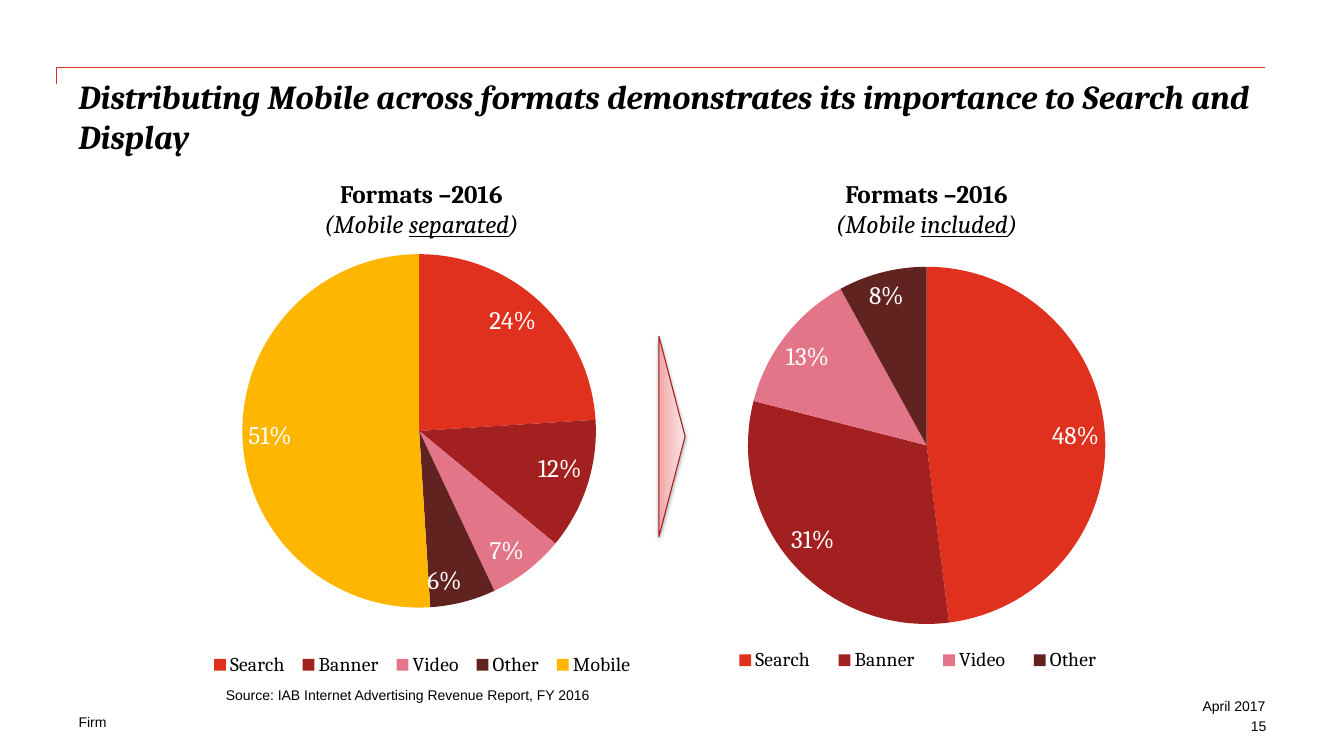
from lxml import etree
from pptx import Presentation
from pptx.chart.data import CategoryChartData
from pptx.dml.color import RGBColor
from pptx.enum import chart as chart_types, shapes, text
from pptx.oxml import parse_xml
from pptx.oxml.ns import nsdecls, qn
from pptx.util import Inches, Pt

# Content
TITLE = "Distributing Mobile across formats demonstrates its importance to Search and Display"
SLICE_COLORS = ["E0301E", "A32020", "E27588", "602320", "FFB600"]
# Boxes are left, top, width, height; plot and legend are shares of the chart
PIES = [
    {"kind": "included", "heading": (8.09, 1.72, 2.2, 0.71), "box": (7.09, 1.86, 5.13, 4.95),
     "plot": (0.064, 0.159, 0.691, 0.716), "legend": (0.005, 0.915, 0.775, 0.065),
     "labels": chart_types.XL_LABEL_POSITION.BEST_FIT,
     "values": {"Search": 48, "Banner": 31, "Video": 13, "Other": 8}},
    {"kind": "separated", "heading": (3, 1.72, 2.36, 0.71), "box": (1.42, 2.15, 8.83, 4.83),
     "plot": (0.057, 0.077, 0.506, 0.726), "legend": (0.067, 0.888, 0.493, 0.065),
     "labels": chart_types.XL_LABEL_POSITION.INSIDE_END,
     "values": {"Search": 24, "Banner": 12, "Video": 7, "Other": 6, "Mobile": 51}},
]
LEFT, RIGHT = text.PP_ALIGN.LEFT, text.PP_ALIGN.RIGHT
TOP, BOTTOM = text.MSO_ANCHOR.TOP, text.MSO_ANCHOR.BOTTOM
NOTES = [
    ("Firm", (0.78, 7.08, 3.78, 0.17), LEFT, TOP),
    ("April 2017", (10.33, 6.92, 2.22, 0.17), RIGHT, TOP),
    ("15", (10.33, 7.12, 2.23, 0.17), RIGHT, TOP),
    ("Source: IAB Internet Advertising Revenue Report, FY 2016", (2.24, 6.81, 5.75, 0.17),
     LEFT, BOTTOM),
]
RULE = [(0.56, 0.83), (0.56, 0.67), (12.55, 0.67)]
ARROW_BOX = (5.67, 4.2, 1.99, 0.26)
ARROW_STOPS = [(0, "F2A3A3"), (35, "F4BFBF"), (100, "FCE6E6")]


def color(value):
    return RGBColor.from_string(value)


def inches(box):
    return [Inches(length) for length in box]


def style_font(font, size, name="Cambria", fill="000000", **formats):
    font.color.rgb = color(fill)
    for key, value in {"size": Pt(size), "name": name, **formats}.items():
        setattr(font, key, value)


def set_frame(frame, margin=0, wrap=True, anchor=TOP):
    for side in ("left", "top", "right", "bottom"):
        setattr(frame, f"margin_{side}", Inches(margin))
    frame.word_wrap, frame.vertical_anchor = wrap, anchor


def set_layout(element, box, inner=False):
    """Give a plot area or legend a fixed place within its chart."""
    for old in element.findall(qn("c:layout")):
        element.remove(old)
    layout = parse_xml(f"<c:layout {nsdecls('c')}/>")
    manual = etree.SubElement(layout, qn("c:manualLayout"))
    fields = [("layoutTarget", "inner")] if inner else []
    fields += [("xMode", "edge"), ("yMode", "edge"), *zip("xywh", box)]
    for name, value in fields:
        etree.SubElement(manual, qn(f"c:{name}")).set("val", str(value))
    if inner:
        element.insert(0, layout)
    else:
        element.find(qn("c:legendPos")).addnext(layout)


def add_pie(slide, pie):
    data = CategoryChartData()
    data.categories = list(pie["values"])
    data.add_series("Series 1", list(pie["values"].values()))
    chart = slide.shapes.add_chart(
        chart_types.XL_CHART_TYPE.PIE, *inches(pie["box"]), data).chart
    chart.has_title = False
    style_font(chart.font, 18)
    chart_part = chart.element.find(qn("c:chart"))
    chart_part.addnext(parse_xml(
        f"<c:spPr {nsdecls('c', 'a')}><a:noFill/><a:ln><a:noFill/></a:ln></c:spPr>"))

    # Slices and their percentages
    plot = chart.plots[0]
    plot.vary_by_categories = True
    for index in range(len(pie["values"])):
        fill = plot.series[0].points[index].format.fill
        fill.solid()
        fill.fore_color.rgb = color(SLICE_COLORS[index])
    labels = plot.series[0].data_labels
    style_font(labels.font, 18, fill="FFFFFF")
    formats = {"show_percentage": True, "show_value": False, "number_format": "0%",
               "number_format_is_linked": False, "position": pie["labels"]}
    for key, value in formats.items():
        setattr(labels, key, value)
    set_layout(chart_part.find(qn("c:plotArea")), pie["plot"], inner=True)

    # Legend
    chart.has_legend = True
    chart.legend.position = chart_types.XL_LEGEND_POSITION.BOTTOM
    chart.legend.include_in_layout = False
    style_font(chart.legend.font, 14)
    set_layout(chart_part.find(qn("c:legend")), pie["legend"])


def add_heading(slide, pie):
    frame = slide.shapes.add_textbox(*inches(pie["heading"])).text_frame
    set_frame(frame, margin=0.05, wrap=False)
    lines = [[("Formats –2016", {"bold": True})],
             [("(Mobile ", {"italic": True}),
              (pie["kind"], {"italic": True, "underline": True}),
              (")", {"italic": True})]]
    for index, line in enumerate(lines):
        paragraph = frame.add_paragraph() if index else frame.paragraphs[0]
        paragraph.alignment = text.PP_ALIGN.CENTER
        for words, formats in line:
            run = paragraph.add_run()
            run.text = words
            style_font(run.font, 18, **formats)


def add_arrow(slide):
    arrow = slide.shapes.add_shape(shapes.MSO_SHAPE.ISOSCELES_TRIANGLE, *inches(ARROW_BOX))
    arrow.rotation = 90
    arrow.line.color.rgb = color("A31C1C")
    arrow.line.width = Pt(0.75)
    stops = "".join(f'<a:gs pos="{share * 1000}"><a:srgbClr val="{value}"/></a:gs>'
                    for share, value in ARROW_STOPS)
    properties = arrow.element.spPr
    properties.find(qn("a:prstGeom")).addnext(parse_xml(
        f'<a:gradFill {nsdecls("a")} rotWithShape="1"><a:gsLst>{stops}</a:gsLst>'
        '<a:lin ang="16200000" scaled="0"/></a:gradFill>'))
    properties.append(parse_xml(
        f'<a:effectLst {nsdecls("a")}><a:outerShdw blurRad="{Pt(3.1)}" dist="{Pt(1.6)}" '
        'dir="5400000" rotWithShape="0"><a:srgbClr val="000000"><a:alpha val="38000"/>'
        '</a:srgbClr></a:outerShdw></a:effectLst>'))


def main():
    presentation = Presentation()
    presentation.slide_width, presentation.slide_height = Inches(13.33), Inches(7.5)
    slide = presentation.slides.add_slide(presentation.slide_layouts[5])

    # Title and the rule above it
    title = slide.shapes.title
    title.left, title.top, title.width, title.height = inches((0.78, 0.75, 11.77, 1))
    title.text_frame.text = TITLE
    set_frame(title.text_frame)
    title.text_frame.auto_size = text.MSO_AUTO_SIZE.NONE
    paragraph = title.text_frame.paragraphs[0]
    paragraph.alignment = LEFT
    style_font(paragraph.runs[0].font, 24, bold=True, italic=True)
    start, *corners = [inches(point) for point in RULE]
    builder = slide.shapes.build_freeform(*start)
    builder.add_line_segments(corners, close=False)
    rule = builder.convert_to_shape()
    rule.shadow.inherit = False
    rule.fill.background()
    rule.line.color.rgb = color("E0301E")
    rule.line.width = Pt(1)

    # Pies with headings, and the arrow between them
    for pie in PIES:
        add_pie(slide, pie)
        add_heading(slide, pie)
    add_arrow(slide)

    # Footer and source
    for words, box, alignment, anchor in NOTES:
        frame = slide.shapes.add_textbox(*inches(box)).text_frame
        set_frame(frame, anchor=anchor)
        frame.text = words
        frame.paragraphs[0].alignment = alignment
        style_font(frame.paragraphs[0].runs[0].font, 10, name="Arial")

    presentation.save("out.pptx")


if __name__ == "__main__":
    main()
